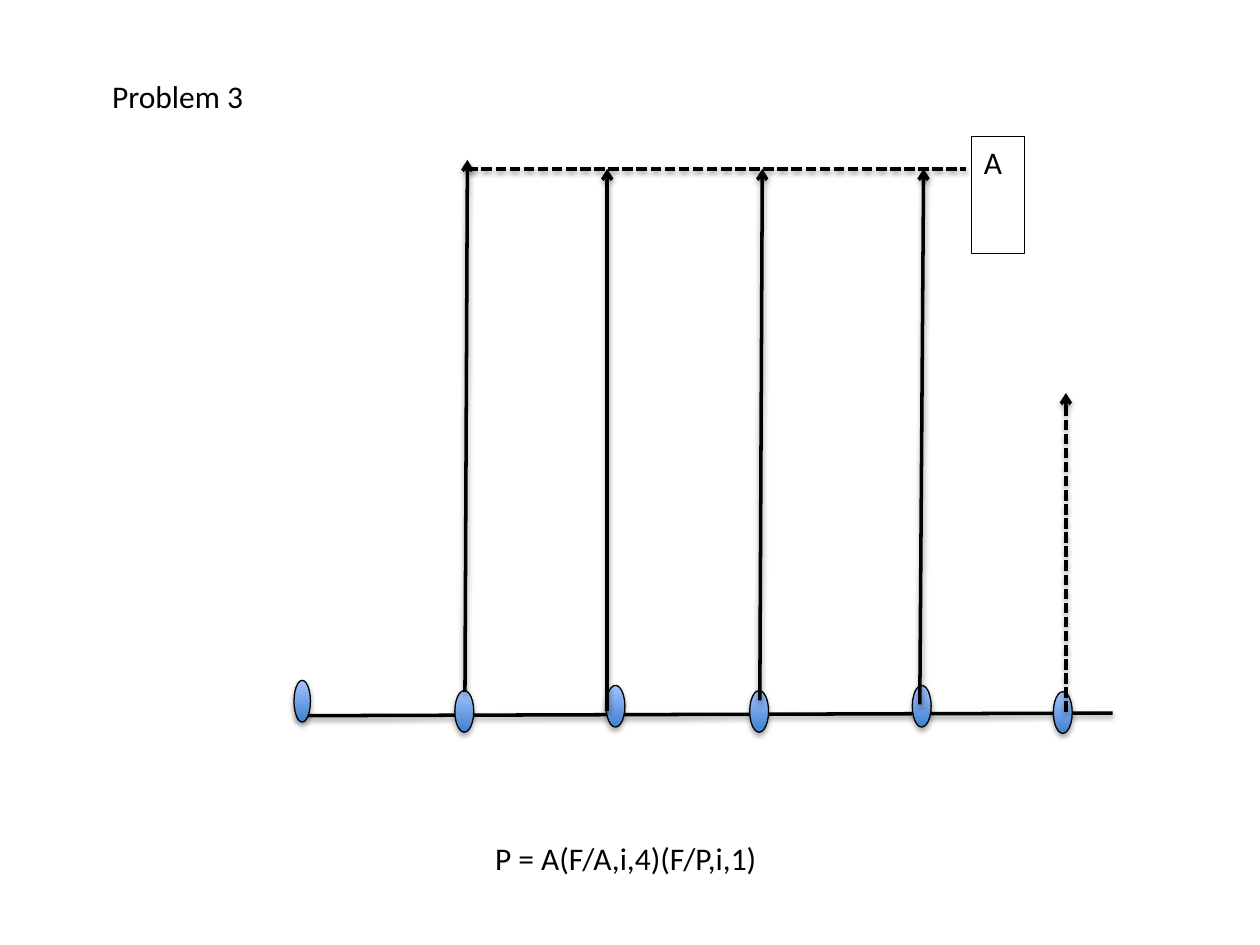
import lxml.etree
import pptx
import pptx.dml.color
import pptx.enum.dml
import pptx.enum.shapes
import pptx.enum.text
import pptx.oxml.ns
import pptx.util

Pt = pptx.util.Pt
BLACK, PALE_BLUE, DEEP_BLUE = "000000", "A4C4FF", "3F80CE"
NODES = [(0, 310.8, 9.4), (91.9, 316.6, 10.8), (178.3, 313.7, 10.8),
         (260.4, 316.6, 10.8), (353.3, 313.7, 10.8), (433.9, 317.3, 10.8)]
PAYMENTS = [(97.7, 317.3, 99.1, 13.4), (179, 328.1, 179, 18.5),
            (266.2, 322.3, 267.6, 18.5), (357.6, 324.5, 359.8, 18.5)]
FUTURE_VALUE = (441.1, 328.8, 441.1, 146.6)
TIMELINE = (1.2, 331, 467.8, 329.5)
LEVEL = (99.1, 18.5, 384.2, 18.5)


def color(hex_string):
    """Return the colour for a hex string."""
    return pptx.dml.color.RGBColor.from_string(hex_string)


def add_xml(parent, tag, **attributes):
    """Append a DrawingML element and return it."""
    return lxml.etree.SubElement(parent, pptx.oxml.ns.qn(tag), attributes)


def add_shadow(shape, distance, opacity):
    """Give a shape a soft black shadow straight below it."""
    effects = add_xml(shape._element.spPr, "a:effectLst")
    shadow = add_xml(effects, "a:outerShdw", blurRad=str(Pt(3.1)), dist=str(Pt(distance)),
                     dir="5400000", rotWithShape="0")
    shade = add_xml(shadow, "a:srgbClr", val=BLACK)
    add_xml(shade, "a:alpha", val=str(opacity * 1000))


def write(shape, text, wrap=False):
    """Write left-aligned 18-point text from the top of a shape."""
    frame = shape.text_frame
    frame.text = text
    frame.word_wrap = wrap
    frame.auto_size = pptx.enum.text.MSO_AUTO_SIZE.NONE
    frame.vertical_anchor = pptx.enum.text.MSO_ANCHOR.TOP
    paragraph = frame.paragraphs[0]
    paragraph.alignment = pptx.enum.text.PP_ALIGN.LEFT
    font = paragraph.runs[0].font
    font.name, font.size = "Calibri", Pt(18)
    font.color.rgb = color(BLACK)


def add_title(slide, left, top, width, height):
    """Place the problem number in the title placeholder."""
    title = slide.shapes.title
    title.left, title.top, title.width, title.height = map(Pt, (left, top, width, height))
    write(title, "Problem 3")


def add_line(slide, left, top, ends, dashed=False, arrow=False):
    """Draw a black line between two points of the diagram."""
    x1, y1, x2, y2 = ends
    line = slide.shapes.add_connector(pptx.enum.shapes.MSO_CONNECTOR.STRAIGHT, Pt(left + x1),
                                      Pt(top + y1), Pt(left + x2), Pt(top + y2))
    line.line.color.rgb = color(BLACK)
    line.line.width = Pt(2)
    if dashed:
        line.line.dash_style = pptx.enum.dml.MSO_LINE.SQUARE_DOT
        line.line._ln.find(pptx.oxml.ns.qn("a:prstDash")).set("val", "sysDash")
    if arrow:
        add_xml(line.line._ln, "a:tailEnd", type="arrow")
    add_shadow(line, 1.6, 38)


def add_node(slide, left, top, width, height):
    """Draw one period marker on the timeline."""
    node = slide.shapes.add_shape(pptx.enum.shapes.MSO_SHAPE.OVAL,
                                  Pt(left), Pt(top), Pt(width), Pt(height))
    node.fill.gradient()
    node.fill.gradient_angle = 90
    for stop, shade, position in zip(node.fill.gradient_stops, (DEEP_BLUE, PALE_BLUE), (0, 1)):
        stop.color.rgb = color(shade)
        stop.position = position
    node.line.color.rgb = color(BLACK)
    node.line.width = Pt(0.75)
    add_shadow(node, 1.8, 35)


def add_amount_label(slide, left, top, width, height):
    """Draw the framed name of the yearly amount."""
    label = slide.shapes.add_shape(pptx.enum.shapes.MSO_SHAPE.RECTANGLE,
                                   Pt(left), Pt(top), Pt(width), Pt(height))
    label.shadow.inherit = False
    label.fill.background()
    label.line.color.rgb = color(BLACK)
    label.line.width = Pt(0.75)
    write(label, "A", wrap=True)


def add_cash_flow(slide, left, top):
    """Draw the timeline, its markers, payments and future value."""
    add_line(slide, left, top, TIMELINE)
    for x, y, width in NODES:
        add_node(slide, left + x, top + y, width, 23.8)
    for payment in PAYMENTS:
        add_line(slide, left, top, payment, arrow=True)
    add_line(slide, left, top, FUTURE_VALUE, dashed=True, arrow=True)
    add_line(slide, left, top, LEVEL, dashed=True)
    add_amount_label(slide, left + 387.1, top, 30.2, 67)


def add_formula(slide, left, top, width, height):
    """Place the answer below the diagram."""
    write(slide.shapes.add_textbox(Pt(left), Pt(top), Pt(width), Pt(height)),
          "P = A(F/A,i,4)(F/P,i,1)")


def main():
    """Build and save the slide."""
    deck = pptx.Presentation()
    deck.slide_width, deck.slide_height = Pt(720), Pt(540)
    slide = deck.slides.add_slide(deck.slide_layouts[5])
    add_title(slide, 56.9, 40.3, 90.7, 28.8)
    add_cash_flow(slide, 168, 78)
    add_formula(slide, 275.8, 475.9, 169.9, 28.8)
    deck.save("out.pptx")


if __name__ == "__main__":
    main()
